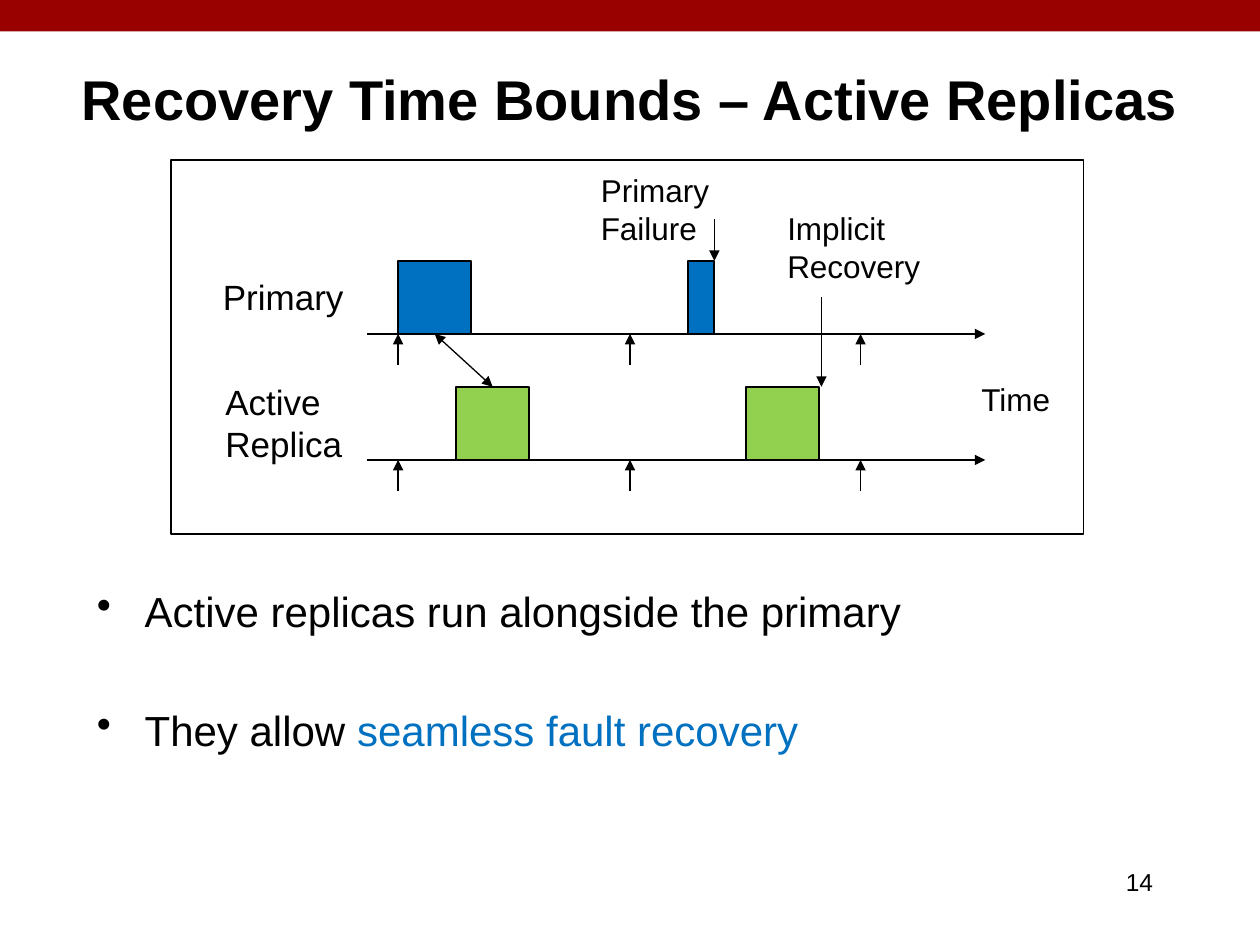
from dataclasses import dataclass
from lxml.etree import SubElement
from pptx import Presentation
from pptx.dml.color import RGBColor as RGB
from pptx.enum.shapes import MSO_CONNECTOR as CONN, MSO_SHAPE as SHAPE
from pptx.enum.text import MSO_ANCHOR as ANCHOR, PP_ALIGN as ALIGN
from pptx.oxml.ns import qn
from pptx.util import Inches, Pt


@dataclass(frozen=True)
class Theme:
    font: str = "Arial"
    ink: str = "000000"
    paper: str = "FFFFFF"
    band: str = "990000"
    blue: str = "0070C0"
    green: str = "92D050"
    title: int = 32
    body: int = 24
    row: int = 20
    label: int = 18
    number: int = 14


T = Theme()

TITLE = "Recovery Time Bounds – Active Replicas"
NUMBER = "14"
BULLETS = [
    ["Active replicas run alongside the primary"],
    ["They allow ", ("seamless fault recovery", T.blue)],
]
LABELS = [
    (["Primary"], (1.67, 2.14, 1.17, 0.44), T.row),
    (["Active", "Replica"], (1.69, 2.97, 1.14, 0.77), T.row),
    (["Time"], (7.69, 2.97, 0.75, 0.4), T.label),
    (["Primary", "Failure"], (4.67, 1.31, 1.14, 0.71), T.label),
    (["Implicit", "Recovery"], (6.15, 1.61, 1.27, 0.71), T.label),
]

JOB, TICK = 0.58, 0.25
AXIS = (2.91, 7.82)
RELEASES = [3.16, 5, 6.83]
PRIMARY_Y, REPLICA_Y = 2.65, 3.65
TIMELINES = [
    (PRIMARY_Y, T.blue, [(3.16, JOB), (5.46, 0.21)]),
    (REPLICA_Y, T.green, [(3.62, JOB), (5.92, JOB)]),
]
FAILURE = (5.67, 1.74, 5.67, PRIMARY_Y - JOB)
RECOVERY = (6.52, 2.36, 6.52, REPLICA_Y - JOB)
SYNC = (3.16 + JOB / 2, PRIMARY_Y, 3.62 + JOB / 2, REPLICA_Y - JOB)


def add_rect(s, box, fill, outline=None):
    """Draw a flat rectangle."""
    sp = s.shapes.add_shape(SHAPE.RECTANGLE, *map(Inches, box))
    sp.shadow.inherit = False
    sp.fill.solid()
    sp.fill.fore_color.rgb = RGB.from_string(fill)
    if outline:
        sp.line.color.rgb = RGB.from_string(outline)
        sp.line.width = Pt(1)
    else:
        sp.line.fill.background()


def add_arrow(s, ends, both=False):
    """Draw a line with a triangle at its end, or at both ends."""
    c = s.shapes.add_connector(CONN.STRAIGHT, *map(Inches, ends))
    c.line.color.rgb = RGB.from_string(T.ink)
    c.line.width = Pt(0.75)
    ln = c.line._get_or_add_ln()
    for tag in ["a:headEnd", "a:tailEnd"] if both else ["a:tailEnd"]:
        SubElement(ln, qn(tag), type="triangle")
    SubElement(c._element.spPr, qn("a:effectLst"))


def add_text(s, paragraphs, box, size, bold=False, align=ALIGN.LEFT,
             anchor=ANCHOR.TOP, wrap=True, bullet=False, gap=0):
    """Write paragraphs made of plain or (text, colour) runs."""
    tf = s.shapes.add_textbox(*map(Inches, box)).text_frame
    tf.word_wrap = wrap
    tf.vertical_anchor = anchor
    for i, runs in enumerate(paragraphs):
        p = tf.paragraphs[0] if i == 0 else tf.add_paragraph()
        p.alignment = align
        if bullet:
            pPr = p._p.get_or_add_pPr()
            pPr.set("marL", str(Inches(0.38)))
            pPr.set("indent", str(-Inches(0.38)))
            SubElement(pPr, qn("a:buChar"), char="•")
        if i and gap:
            p.space_before = Pt(gap)
        for run in [runs] if isinstance(runs, str) else runs:
            text, color = (run, T.ink) if isinstance(run, str) else run
            r = p.add_run()
            r.text = text
            r.font.name = T.font
            r.font.size = Pt(size)
            r.font.bold = bold
            r.font.color.rgb = RGB.from_string(color)


def main():
    """Build the slide and save it."""
    prs = Presentation()
    prs.slide_width, prs.slide_height = Inches(10), Inches(7.5)
    s = prs.slides.add_slide(prs.slide_layouts[6])

    add_rect(s, (0, 0, 10, 0.25), T.band)
    add_rect(s, (1.36, 1.27, 7.24, 2.97), T.paper, T.ink)
    add_text(s, [TITLE], (0, 0.15, 10, 1.25), T.title, bold=True,
             align=ALIGN.CENTER, anchor=ANCHOR.MIDDLE)
    add_text(s, BULLETS, (0.67, 4.6, 8.67, 1.89), T.body, bullet=True, gap=39)
    add_text(s, [NUMBER], (7.17, 6.83, 2.08, 0.5), T.number, align=ALIGN.RIGHT)

    for y, color, jobs in TIMELINES:
        add_arrow(s, (AXIS[0], y, AXIS[1], y))
        for x, width in jobs:
            add_rect(s, (x, y - JOB, width, JOB), color, T.ink)
        for x in RELEASES:
            add_arrow(s, (x, y + TICK, x, y))

    add_arrow(s, FAILURE)
    add_arrow(s, RECOVERY)
    add_arrow(s, SYNC, both=True)
    for lines, box, size in LABELS:
        add_text(s, lines, box, size, wrap=False)

    prs.save("out.pptx")


if __name__ == "__main__":
    main()
